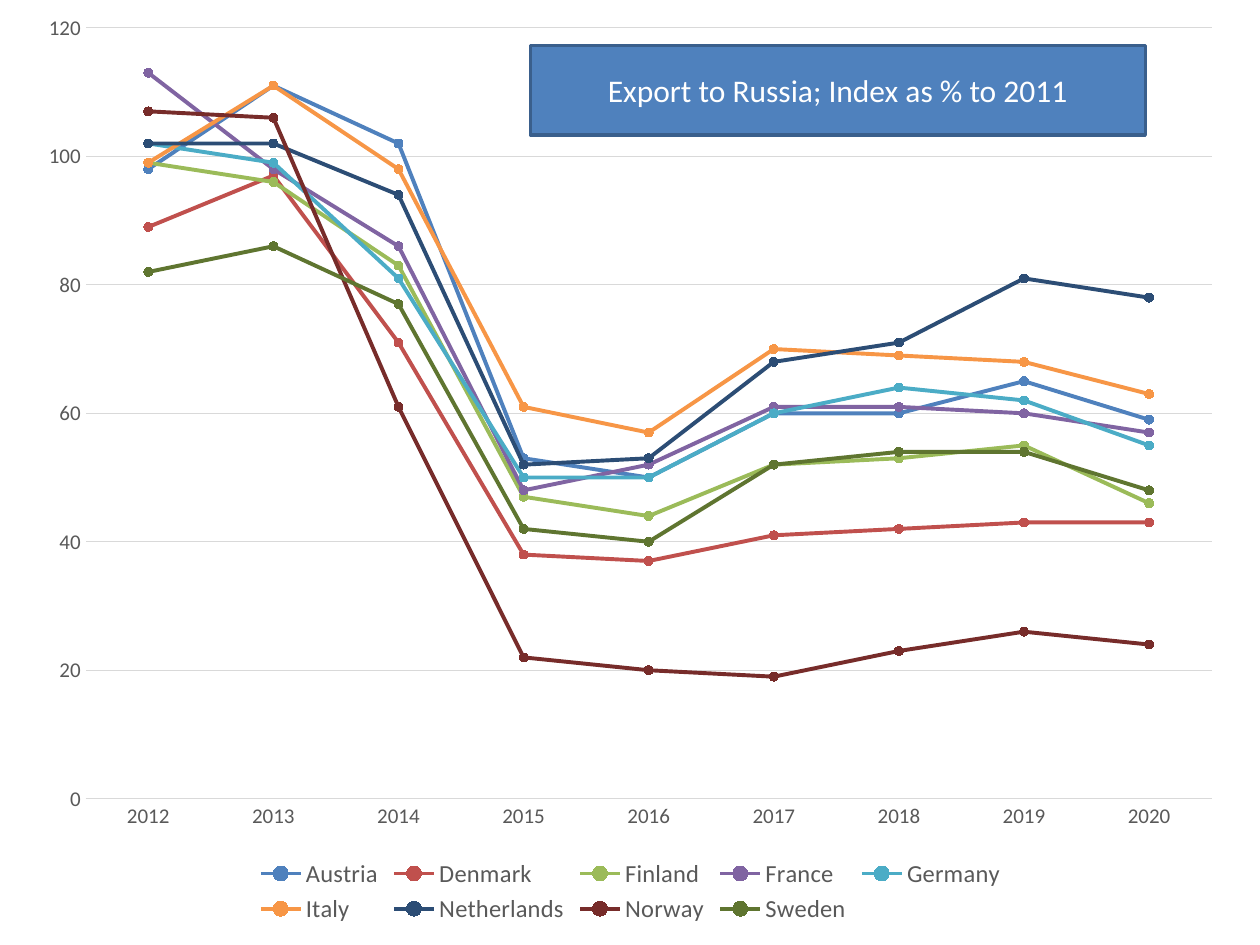
from dataclasses import dataclass

import lxml.etree
import pptx
import pptx.chart.data
import pptx.dml.color
import pptx.enum.chart
import pptx.enum.text
import pptx.oxml.ns
import pptx.util


@dataclass(frozen=True)
class Theme:
    font: str = "Calibri"
    title_fill: str = "4F81BD"
    title_edge: str = "3A5F8C"
    title_text: str = "FFFFFF"
    label: str = "595959"
    grid: str = "D9D9D9"
    title_size: float = 18
    legend_size: float = 14
    axis_size: float = 12
    edge_width: float = 2
    grid_width: float = 0.75
    series_width: float = 2.25
    marker_size: int = 5


THEME = Theme()
WIDTH = pptx.util.Inches(10)
HEIGHT = pptx.util.Inches(7.5)
YEARS = [str(year) for year in range(2012, 2021)]
EXPORTS = {
    "Austria": ("4F81BD", (98, 111, 102, 53, 50, 60, 60, 65, 59)),
    "Denmark": ("C0504D", (89, 97, 71, 38, 37, 41, 42, 43, 43)),
    "Finland": ("9BBB59", (99, 96, 83, 47, 44, 52, 53, 55, 46)),
    "France": ("8064A2", (113, 98, 86, 48, 52, 61, 61, 60, 57)),
    "Germany": ("4BACC6", (102, 99, 81, 50, 50, 60, 64, 62, 55)),
    "Italy": ("F79646", (99, 111, 98, 61, 57, 70, 69, 68, 63)),
    "Netherlands": ("2C4D75", (102, 102, 94, 52, 53, 68, 71, 81, 78)),
    "Norway": ("772C2A", (107, 106, 61, 22, 20, 19, 23, 26, 24)),
    "Sweden": ("5F7530", (82, 86, 77, 42, 40, 52, 54, 54, 48)),
}


def rgb(color):
    return pptx.dml.color.RGBColor.from_string(color)


def share_box(left, top, width, height):
    return (
        round(WIDTH * left / 100),
        round(HEIGHT * top / 100),
        round(WIDTH * width / 100),
        round(HEIGHT * height / 100),
    )


def style_font(font, size, color):
    font.name = THEME.font
    font.size = pptx.util.Pt(size)
    font.color.rgb = rgb(color)


def style_line(line, color, width):
    line.fill.solid()
    line.fill.fore_color.rgb = rgb(color)
    line.width = pptx.util.Pt(width)


def style_axis(axis):
    axis.major_tick_mark = pptx.enum.chart.XL_TICK_MARK.NONE
    axis.minor_tick_mark = pptx.enum.chart.XL_TICK_MARK.NONE
    style_font(axis.tick_labels.font, THEME.axis_size, THEME.label)


def style_series(series, color):
    series.smooth = False
    style_line(series.format.line, color, THEME.series_width)
    marker = series.marker
    marker.style = pptx.enum.chart.XL_MARKER_STYLE.CIRCLE
    marker.size = THEME.marker_size
    marker.format.fill.solid()
    marker.format.fill.fore_color.rgb = rgb(color)
    style_line(marker.format.line, color, THEME.grid_width)


def place_plot(chart, left, top, width, height):
    qn = pptx.oxml.ns.qn
    plot_area = chart.element.find(".//" + qn("c:plotArea"))
    layout = plot_area.find(qn("c:layout"))
    if layout is None:
        layout = lxml.etree.Element(qn("c:layout"))
        plot_area.insert(0, layout)
    manual = lxml.etree.SubElement(layout, qn("c:manualLayout"))
    settings = {
        "layoutTarget": "inner", "xMode": "edge", "yMode": "edge",
        "x": left, "y": top, "w": width, "h": height,
    }
    for name, value in settings.items():
        lxml.etree.SubElement(manual, qn("c:" + name), val=str(value))


def add_export_chart(page):
    data = pptx.chart.data.CategoryChartData(number_format="0")
    data.categories = YEARS
    for country, (color, values) in EXPORTS.items():
        data.add_series(country, values)
    kind = pptx.enum.chart.XL_CHART_TYPE.LINE_MARKERS
    chart = page.shapes.add_chart(kind, *share_box(2, 0, 96.1, 98.3), data).chart
    chart.has_title = False
    chart.font.name = THEME.font
    chart.font.size = pptx.util.Pt(10)
    chart.plots[0].vary_by_categories = False
    for series in chart.plots[0].series:
        style_series(series, EXPORTS[series.name][0])

    style_axis(chart.category_axis)
    style_line(chart.category_axis.format.line, THEME.grid, THEME.grid_width)
    values_axis = chart.value_axis
    style_axis(values_axis)
    values_axis.minimum_scale = 0
    values_axis.maximum_scale = 120
    values_axis.major_unit = 20
    values_axis.tick_labels.number_format = "0"
    values_axis.tick_labels.number_format_is_linked = False
    values_axis.format.line.fill.background()
    style_line(values_axis.major_gridlines.format.line, THEME.grid, THEME.grid_width)

    chart.has_legend = True
    chart.legend.position = pptx.enum.chart.XL_LEGEND_POSITION.BOTTOM
    chart.legend.include_in_layout = False
    style_font(chart.legend.font, THEME.legend_size, THEME.label)
    place_plot(chart, 0.05, 0.03, 0.93, 0.83)


def add_title(page, text):
    box = page.shapes.title
    box.left, box.top, box.width, box.height = share_box(42.1, 4.8, 48.8, 9.5)
    box.fill.solid()
    box.fill.fore_color.rgb = rgb(THEME.title_fill)
    style_line(box.line, THEME.title_edge, THEME.edge_width)
    frame = box.text_frame
    frame.word_wrap = True
    frame.auto_size = pptx.enum.text.MSO_AUTO_SIZE.NONE
    frame.vertical_anchor = pptx.enum.text.MSO_ANCHOR.MIDDLE
    para = frame.paragraphs[0]
    para.alignment = pptx.enum.text.PP_ALIGN.CENTER
    span = para.add_run()
    span.text = text
    style_font(span.font, THEME.title_size, THEME.title_text)
    box.element.getparent().append(box.element)


def main():
    deck = pptx.Presentation()
    deck.slide_width, deck.slide_height = WIDTH, HEIGHT
    page = deck.slides.add_slide(deck.slide_layouts.get_by_name("Title Only"))
    add_export_chart(page)
    add_title(page, "Export to Russia; Index as % to 2011")
    deck.save("out.pptx")


if __name__ == "__main__":
    main()
